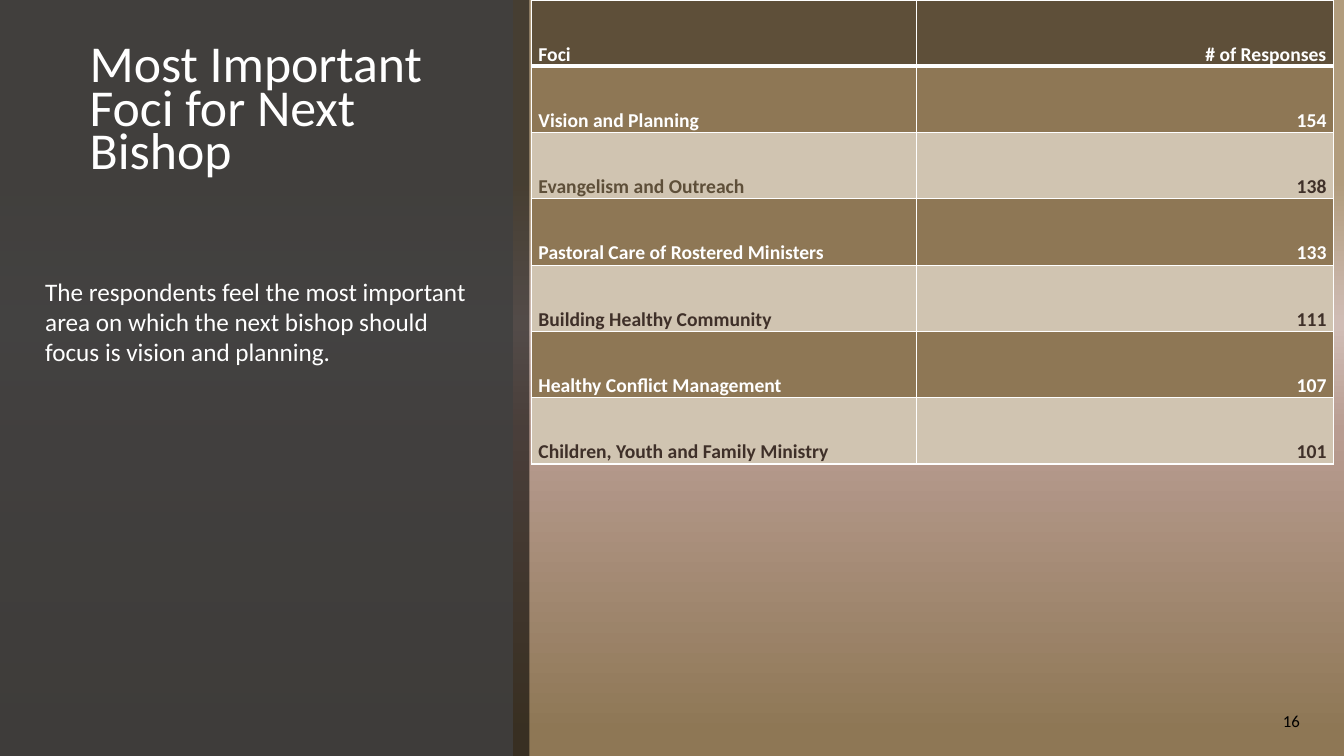
from dataclasses import dataclass

from lxml.etree import SubElement
from pptx import Presentation
from pptx.dml.color import RGBColor
from pptx.enum.shapes import MSO_SHAPE as Shape
from pptx.enum.text import MSO_ANCHOR as Anchor, MSO_AUTO_SIZE as AutoSize, PP_ALIGN as Align
from pptx.oxml.ns import qn
from pptx.slide import Slide
from pptx.table import _Cell as Cell
from pptx.util import Cm, Pt


@dataclass(frozen=True)
class Theme:
    font: str = "Calibri"
    white: str = "FFFFFF"
    black: str = "000000"
    charcoal: str = "404040"
    header: str = "5E4F39"
    dark_band: str = "8E7755"
    light_band: str = "D0C4B1"
    ink: str = "3F3029"
    title_size: float = 37
    body_size: float = 18
    table_size: float = 14
    number_size: float = 12
    thin: float = 1
    thick: float = 3
    backdrop: tuple[tuple[int, str], ...] = (
        (24, "B19C7D"), (43, "D0BDB6"), (57, "B89C91"), (97, "8E7755"))


THEME = Theme()


@dataclass(frozen=True)
class Panel:
    width: float
    color: str
    opacity: int


@dataclass(frozen=True)
class Label:
    text: str
    left: float
    top: float
    width: float
    height: float
    size: float
    color: str = THEME.white
    anchor: Anchor = Anchor.TOP
    line_spacing: float = 1.0
    space_after: float = 0
    auto_size: AutoSize = AutoSize.NONE


@dataclass(frozen=True)
class Focus:
    name: str
    responses: str
    fill: str
    color: str
    name_color: str = ""


SLIDE_W, SLIDE_H = 33.87, 19.05
TABLE_LEFT, ROW_H = 13.39, 1.67
COLUMNS = (9.7, 10.52)

PANELS = (
    Panel(13.34, THEME.black, 60),
    Panel(12.93, THEME.charcoal, 80),
)

LABELS = (
    Label("Most Important Foci for Next Bishop", 2.01, 0.89, 9.3, 3.73, THEME.title_size,
          anchor=Anchor.BOTTOM, line_spacing=0.7, space_after=6),
    Label("16", 32.08, 17.65, 1.55, 1.02, THEME.number_size, THEME.black,
          anchor=Anchor.MIDDLE, space_after=6),
    Label("The respondents feel the most important area on which the next bishop "
          "should focus is vision and planning.", 0.89, 6.83, 11.53, 2.57, THEME.body_size,
          auto_size=AutoSize.SHAPE_TO_FIT_TEXT),
)

DARK = (THEME.dark_band, THEME.white)
LIGHT = (THEME.light_band, THEME.ink)

FOCI = (
    Focus("Foci", "# of Responses", THEME.header, THEME.white),
    Focus("Vision and Planning", "154", *DARK),
    Focus("Evangelism and Outreach", "138", *LIGHT, name_color=THEME.header),
    Focus("Pastoral Care of Rostered Ministers", "133", *DARK),
    Focus("Building Healthy Community", "111", *LIGHT),
    Focus("Healthy Conflict Management", "107", *DARK),
    Focus("Children, Youth and Family Ministry", "101", *LIGHT),
)


def rgb(color: str) -> RGBColor:
    return RGBColor.from_string(color)


def paint_background(s: Slide) -> None:
    fill = s.background.fill
    fill.gradient()
    fill.gradient_angle = 270
    stops = next(s.element.iter(qn("a:gsLst")))
    stops.clear()
    for percent, color in THEME.backdrop:
        stop = SubElement(stops, qn("a:gs"), pos=str(percent * 1000))
        SubElement(stop, qn("a:srgbClr"), val=color)


def add_panel(s: Slide, panel: Panel) -> None:
    sp = s.shapes.add_shape(Shape.RECTANGLE, 0, 0, Cm(panel.width), Cm(SLIDE_H))
    sp.shadow.inherit = False
    sp.fill.solid()
    sp.fill.fore_color.rgb = rgb(panel.color)
    sp.line.fill.background()
    color = next(sp.element.spPr.iter(qn("a:srgbClr")))
    SubElement(color, qn("a:alpha"), val=str(panel.opacity * 1000))


def add_label(s: Slide, label: Label) -> None:
    sp = s.shapes.add_textbox(Cm(label.left), Cm(label.top), Cm(label.width), Cm(label.height))
    tf = sp.text_frame
    tf.word_wrap = True
    tf.auto_size = label.auto_size
    tf.vertical_anchor = label.anchor
    p = tf.paragraphs[0]
    p.text = label.text
    p.line_spacing = label.line_spacing
    p.space_after = Pt(label.space_after)
    p.font.name = THEME.font
    p.font.size = Pt(label.size)
    p.font.color.rgb = rgb(label.color)


def set_borders(cell: Cell, top: float, bottom: float) -> None:
    tc_pr = cell._tc.get_or_add_tcPr()
    widths = {"a:lnL": THEME.thin, "a:lnR": THEME.thin, "a:lnT": top, "a:lnB": bottom}
    for i, (tag, width) in enumerate(widths.items()):
        line = SubElement(tc_pr, qn(tag), w=str(Pt(width)))
        fill = SubElement(line, qn("a:solidFill"))
        SubElement(fill, qn("a:srgbClr"), val=THEME.white)
        tc_pr.insert(i, line)


def fill_cell(cell: Cell, text: str, fill: str, color: str, align: Align) -> None:
    cell.fill.solid()
    cell.fill.fore_color.rgb = rgb(fill)
    cell.vertical_anchor = Anchor.BOTTOM
    cell.margin_left = cell.margin_right = Cm(0.18)
    cell.margin_top = cell.margin_bottom = 0
    p = cell.text_frame.paragraphs[0]
    p.text = text
    p.alignment = align
    p.line_spacing = 1.07
    p.font.name = THEME.font
    p.font.size = Pt(THEME.table_size)
    p.font.bold = True
    p.font.color.rgb = rgb(color)


def add_foci_table(s: Slide) -> None:
    table = s.shapes.add_table(len(FOCI), len(COLUMNS), Cm(TABLE_LEFT), 0,
                               Cm(sum(COLUMNS)), Cm(ROW_H * len(FOCI))).table
    table.horz_banding = False
    for column, width in zip(table.columns, COLUMNS):
        column.width = Cm(width)
    for i, (row, focus) in enumerate(zip(table.rows, FOCI)):
        row.height = Cm(ROW_H)
        name, responses = row.cells
        fill_cell(name, focus.name, focus.fill, focus.name_color or focus.color, Align.LEFT)
        fill_cell(responses, focus.responses, focus.fill, focus.color, Align.RIGHT)
        for cell in (name, responses):
            set_borders(cell, top=THEME.thick if i == 1 else THEME.thin,
                        bottom=THEME.thick if i == 0 else THEME.thin)


def main() -> None:
    prs = Presentation()
    prs.slide_width, prs.slide_height = Cm(SLIDE_W), Cm(SLIDE_H)
    s = prs.slides.add_slide(prs.slide_layouts[6])
    paint_background(s)
    for panel in PANELS:
        add_panel(s, panel)
    for label in LABELS:
        add_label(s, label)
    add_foci_table(s)
    prs.save("out.pptx")


if __name__ == "__main__":
    main()
